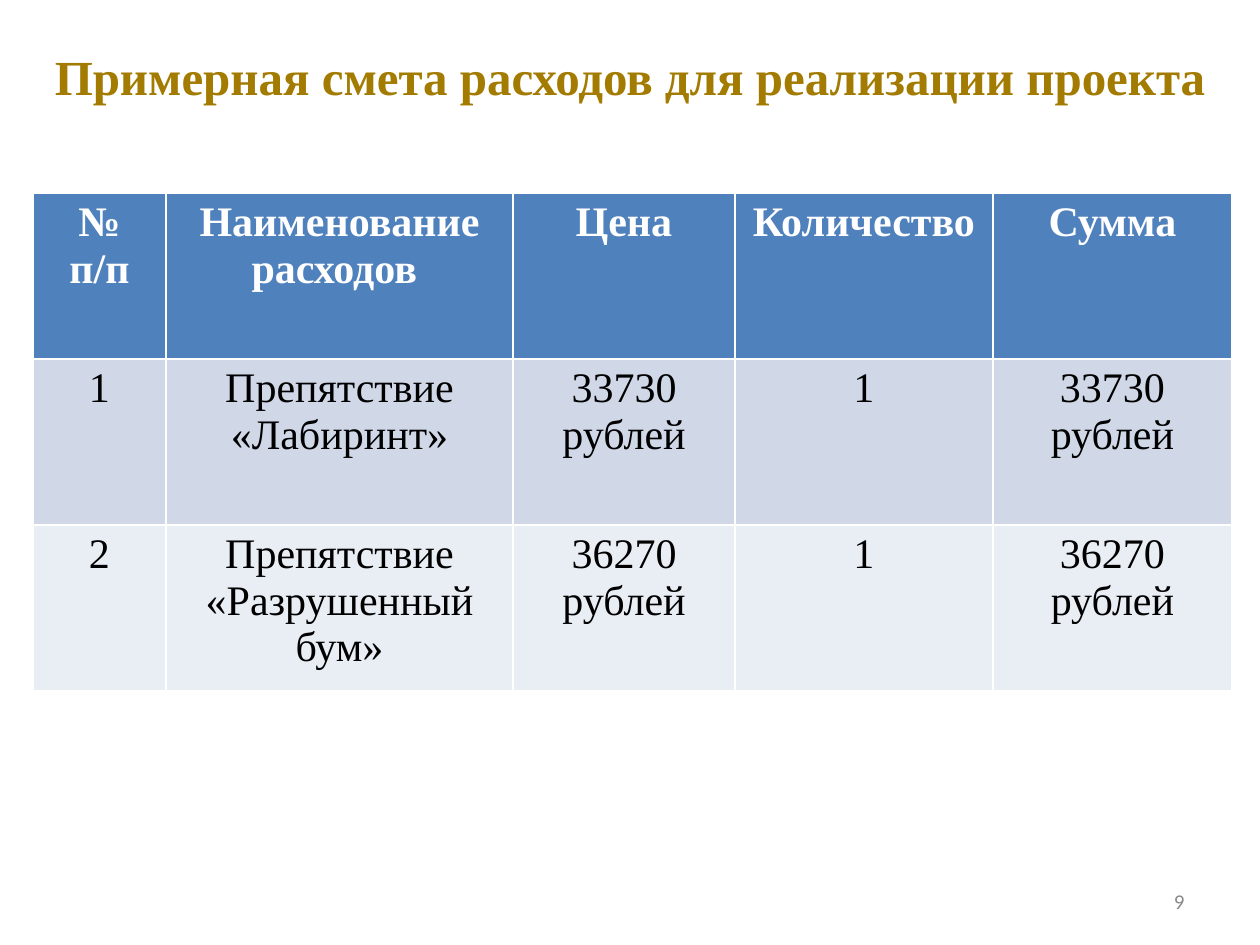
"""Build a slide with a cost estimate table for a project."""
from pptx import Presentation
from pptx.dml.color import RGBColor
from pptx.enum.text import MSO_ANCHOR, MSO_AUTO_SIZE, PP_ALIGN
from pptx.util import Pt

CENTER, RIGHT = PP_ALIGN.CENTER, PP_ALIGN.RIGHT
MIDDLE = MSO_ANCHOR.MIDDLE
NO_AUTOFIT = MSO_AUTO_SIZE.NONE
EMU_PER_PX = 914400 / 126
TITLE_ONLY = 5

HEADING = "Примерная смета расходов для реализации проекта"
PAGE_NUMBER = "9"
ESTIMATE = [
    ("№ п/п", "Наименование расходов ", "Цена", "Количество", "Сумма"),
    ("1", "Препятствие «Лабиринт»", "33730 рублей", "1", "33730 рублей"),
    ("2", "Препятствие «Разрушенный бум»", "36270 рублей", "1", "36270 рублей"),
]
COLUMN_WIDTHS = [133, 347, 222, 258, 239]
ROW_HEIGHT = 166
ROW_FILLS = ["4F81BD", "D0D8E8", "E9EDF4"]

SERIF = "Times New Roman"
HEADING_FONT = {"name": SERIF, "size": Pt(28), "bold": True}
HEADER_FONT = {"name": SERIF, "size": Pt(24), "bold": True}
BODY_FONT = {"name": SERIF, "size": Pt(24), "bold": False}
PAGE_FONT = {"name": "Calibri", "size": Pt(12)}


def px(length):
    return round(length * EMU_PER_PX)


def rgb(color):
    return RGBColor.from_string(color)


def write(frame, text, font_format, color, align):
    frame.text = text
    paragraph = frame.paragraphs[0]
    paragraph.alignment = align
    font = paragraph.runs[0].font
    for attribute, value in font_format.items():
        setattr(font, attribute, value)
    font.color.rgb = rgb(color)


def add_heading(slide):
    heading = slide.shapes.title
    place = {"left": 0, "top": 40, "width": 1260, "height": 72}
    for attribute, value in place.items():
        setattr(heading, attribute, px(value))
    frame = heading.text_frame
    write(frame, HEADING, HEADING_FONT, "A27B00", CENTER)
    frame.auto_size = NO_AUTOFIT
    frame.vertical_anchor = MIDDLE


def add_estimate(slide):
    place = (33, 193, sum(COLUMN_WIDTHS), ROW_HEIGHT * len(ESTIMATE))
    estimate = slide.shapes.add_table(
        len(ESTIMATE), len(COLUMN_WIDTHS), *map(px, place)).table
    for column, width in zip(estimate.columns, COLUMN_WIDTHS):
        column.width = px(width)
    for index, (row, entries, fill) in enumerate(
            zip(estimate.rows, ESTIMATE, ROW_FILLS)):
        row.height = px(ROW_HEIGHT)
        font_format, color = (BODY_FONT, "000000") if index else (HEADER_FONT, "FFFFFF")
        for cell, entry in zip(row.cells, entries):
            cell.fill.solid()
            cell.fill.fore_color.rgb = rgb(fill)
            write(cell.text_frame, entry, font_format, color, CENTER)


def add_page_number(slide):
    frame = slide.shapes.add_textbox(*map(px, (903, 876, 294, 50))).text_frame
    frame.word_wrap = True
    frame.vertical_anchor = MIDDLE
    write(frame, PAGE_NUMBER, PAGE_FONT, "898989", RIGHT)


def main():
    deck = Presentation()
    deck.slide_width, deck.slide_height = px(1260), px(945)
    slide = deck.slides.add_slide(deck.slide_layouts[TITLE_ONLY])
    add_page_number(slide)
    add_heading(slide)
    add_estimate(slide)
    deck.save("out.pptx")


if __name__ == "__main__":
    main()
